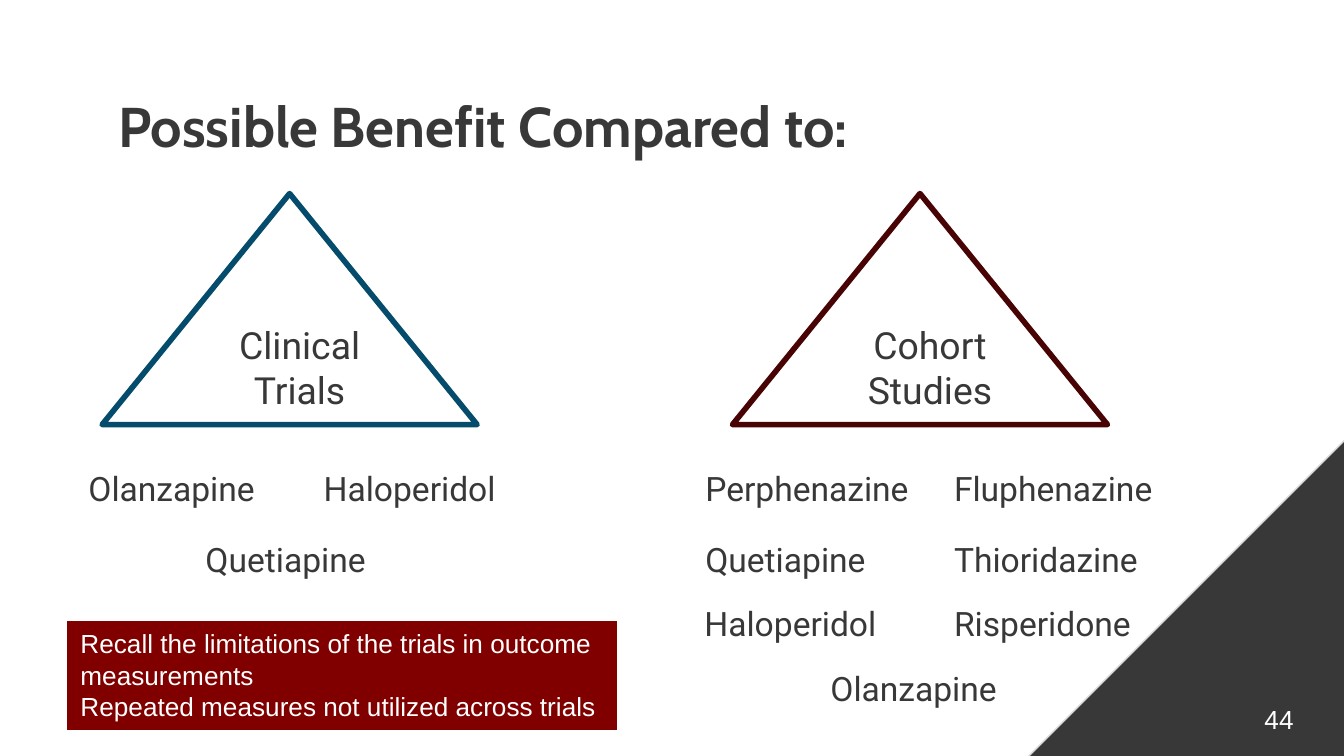
from dataclasses import dataclass

from lxml import etree
from pptx import Presentation
from pptx.dml.color import RGBColor
from pptx.enum.shapes import MSO_SHAPE
from pptx.enum.text import MSO_ANCHOR, PP_ALIGN
from pptx.oxml.ns import qn
from pptx.util import Pt

TRIANGLE = MSO_SHAPE.ISOSCELES_TRIANGLE
RIGHT_TRIANGLE = MSO_SHAPE.RIGHT_TRIANGLE
RECTANGLE = MSO_SHAPE.RECTANGLE
LEFT, CENTER = PP_ALIGN.LEFT, PP_ALIGN.CENTER
TOP, MIDDLE = MSO_ANCHOR.TOP, MSO_ANCHOR.MIDDLE

COLORS = {
    "dark": "383838",
    "edge": "DBDBDB",
    "blue": "054B6B",
    "maroon": "480404",
    "red": "800000",
    "white": "FFFFFF",
}
INDENT = 10.8


@dataclass(frozen=True)
class Box:
    left: float
    top: float
    width: float
    height: float

    def lengths(self) -> tuple:
        return Pt(self.left), Pt(self.top), Pt(self.width), Pt(self.height)


@dataclass(frozen=True)
class TextStyle:
    font: str
    size: float
    color: str
    bold: bool = False
    align: PP_ALIGN = LEFT
    anchor: MSO_ANCHOR = TOP
    indent: float = 0
    inset: float = 7.2


@dataclass(frozen=True)
class StudyType:
    name: str
    left: float
    line: str


@dataclass(frozen=True)
class Drug:
    name: str
    left: float
    top: float
    width: float


TITLE = TextStyle("Cabin", 30, "dark", bold=True)
STUDY = TextStyle("Roboto", 20, "dark", align=CENTER, anchor=MIDDLE, indent=INDENT)
DRUG = TextStyle("Roboto", 18, "dark", indent=INDENT)
NOTE = TextStyle("Arial", 14, "white", inset=3.6)

STUDY_TYPES = [
    StudyType("Clinical Trials", 54.7, "blue"),
    StudyType("Cohort Studies", 392.4, "maroon"),
]

ROWS = [243.7, 281.5, 315.7, 350.6]
DRUGS = [
    Drug("Olanzapine", 29.5, ROWS[0], 126.7),
    Drug("Haloperidol", 155.5, ROWS[0], 126.7),
    Drug("Quetiapine", 92.2, ROWS[1], 126.7),
    Drug("Perphenazine", 360, ROWS[0], 175),
    Drug("Quetiapine", 360, ROWS[1], 131.8),
    Drug("Haloperidol", 359.5, ROWS[2], 131.8),
    Drug("Fluphenazine", 493.2, ROWS[0], 159.8),
    Drug("Thioridazine", 493.2, ROWS[1], 159.8),
    Drug("Risperidone", 493.2, ROWS[2], 159.8),
    Drug("Olanzapine", 427, ROWS[3], 131.8),
]


def rgb(name: str) -> RGBColor:
    return RGBColor.from_string(COLORS[name])


def write(shape, text: str, style: TextStyle) -> None:
    frame = shape.text_frame
    frame.text = text
    frame.word_wrap = True
    frame.vertical_anchor = style.anchor
    frame.margin_left = frame.margin_right = Pt(7.2)
    frame.margin_top = frame.margin_bottom = Pt(style.inset)
    for para in frame.paragraphs:
        para.alignment = style.align
        if style.indent:
            properties = para._p.get_or_add_pPr()
            properties.set("marL", str(Pt(style.indent)))
            properties.set("indent", "0")
        for span in para.runs:
            span.font.name = style.font
            span.font.size = Pt(style.size)
            span.font.bold = style.bold
            span.font.color.rgb = rgb(style.color)


def add_text(page, box: Box, text: str, style: TextStyle) -> None:
    write(page.shapes.add_textbox(*box.lengths()), text, style)


def add_shape(page, kind: MSO_SHAPE, box: Box, fill: str = "", line: str = "",
              line_width: float = 0):
    """Add a preset shape; an empty colour name means no fill or no line."""
    shape = page.shapes.add_shape(kind, *box.lengths())
    shape.shadow.inherit = False
    if fill:
        shape.fill.solid()
        shape.fill.fore_color.rgb = rgb(fill)
    else:
        shape.fill.background()
    if line:
        shape.line.color.rgb = rgb(line)
        shape.line.width = Pt(line_width)
    else:
        shape.line.fill.background()
    return shape


def add_study_type(page, study: StudyType) -> None:
    box = Box(study.left, 103.7, 200.9, 123.8)
    triangle = add_shape(page, TRIANGLE, box, line=study.line, line_width=3)
    etree.SubElement(triangle.line._get_or_add_ln(), qn("a:round"))
    write(triangle, study.name, STUDY)


def add_corner(page) -> None:
    corner = add_shape(page, RIGHT_TRIANGLE, Box(457.2, 121, 378, 378),
                       "dark", "edge", 0.75)
    corner._element.spPr.find(qn("a:xfrm")).set("flipH", "1")


def main() -> None:
    deck = Presentation()
    deck.slide_width, deck.slide_height = Pt(720), Pt(405)
    page = deck.slides.add_slide(deck.slide_layouts[6])

    add_corner(page)
    add_text(page, Box(56.2, 41.8, 454.3, 41.8), "Possible Benefit Compared to:", TITLE)
    for study in STUDY_TYPES:
        add_study_type(page, study)
    for drug in DRUGS:
        add_text(page, Box(drug.left, drug.top, drug.width, 33.1), drug.name, DRUG)

    note = add_shape(page, RECTANGLE, Box(36, 332.8, 294.5, 58.2), "red")
    write(note, "Recall the limitations of the trials in outcome measurements\n"
                "Repeated measures not utilized across trials", NOTE)
    add_text(page, Box(670.3, 373, 36.7, 24.3), "44", NOTE)

    deck.save("out.pptx")


if __name__ == "__main__":
    main()
